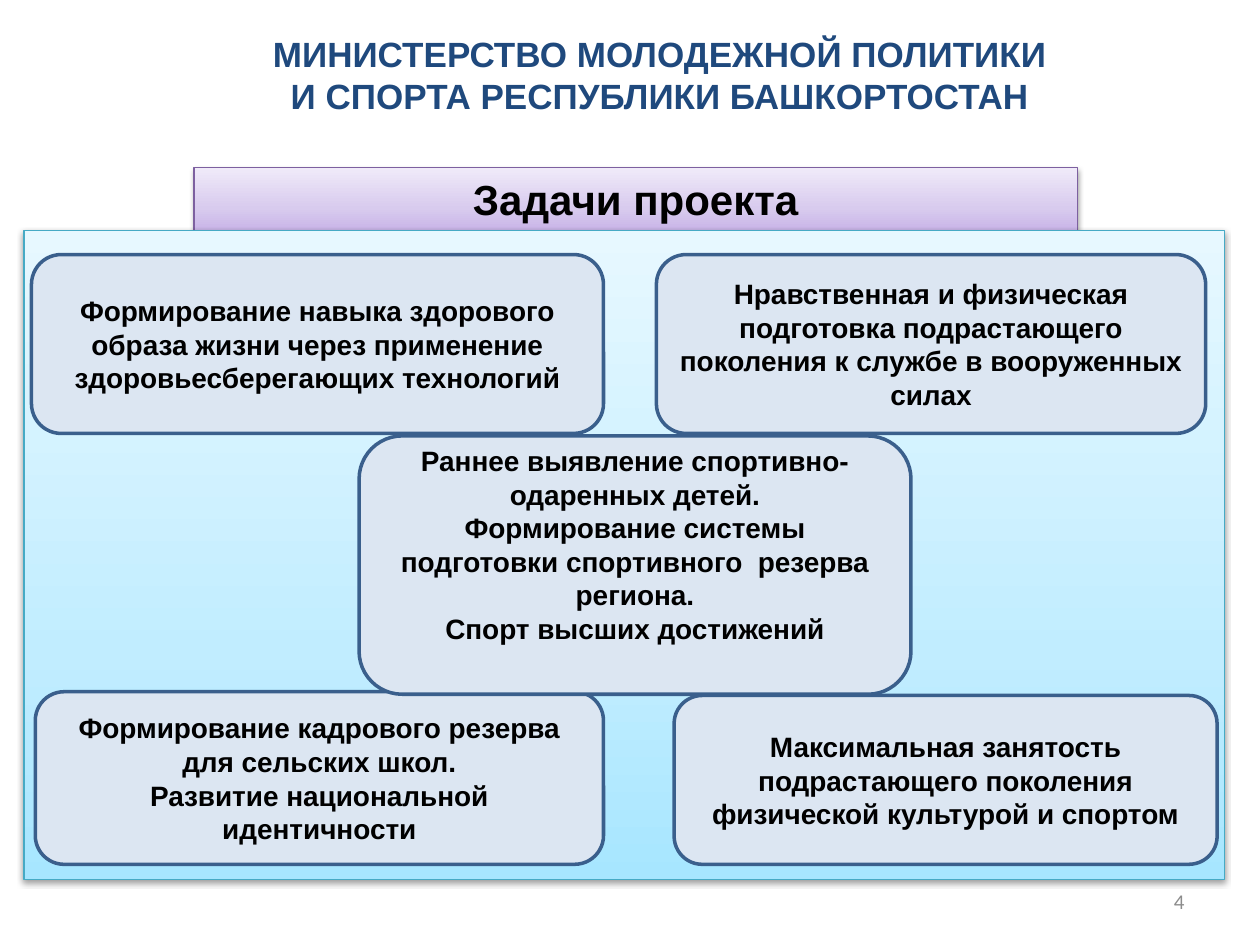
import copy
import pptx
import pptx.util
import pptx.dml.color
import pptx.enum.shapes
import pptx.enum.text
import pptx.oxml
import pptx.oxml.ns

Inches, Pt = pptx.util.Inches, pptx.util.Pt
RGB = pptx.dml.color.RGBColor
Align, Anchor = pptx.enum.text.PP_ALIGN, pptx.enum.text.MSO_ANCHOR
Kind = pptx.enum.shapes.MSO_SHAPE

NAVY = RGB(0x1F, 0x49, 0x7D)
BLACK = RGB(0, 0, 0)
GREY = RGB(0x8C, 0x8C, 0x8C)
CARD = RGB(0xDC, 0xE6, 0xF2)
EDGE = RGB(0x3A, 0x5F, 0x8C)
PLUM = RGB(0x7D, 0x60, 0xA0)
TEAL = RGB(0x46, 0xAA, 0xC5)
LILAC = (RGB(0xC9, 0xB5, 0xE8), RGB(0xD8, 0xCB, 0xEE), RGB(0xF0, 0xEA, 0xF9))
SKY = (RGB(0xA7, 0xE6, 0xFF), RGB(0xC1, 0xED, 0xFF), RGB(0xE7, 0xF8, 0xFF))

TITLE = ("МИНИСТЕРСТВО МОЛОДЕЖНОЙ ПОЛИТИКИ", "И СПОРТА РЕСПУБЛИКИ БАШКОРТОСТАН")
CARDS = (
    ((0.25, 2.02, 4.54, 1.42),
     ("Формирование навыка здорового образа жизни через применение "
      "здоровьесберегающих технологий",)),
    ((0.28, 5.49, 4.51, 1.37),
     ("Формирование кадрового резерва для сельских школ.",
      "Развитие национальной идентичности")),
    ((5.35, 5.52, 4.31, 1.34),
     ("Максимальная занятость подрастающего поколения физической "
      "культурой и спортом",)),
    ((5.21, 2.02, 4.36, 1.42),
     ("Нравственная и физическая подготовка подрастающего поколения "
      "к службе в вооруженных силах",)),
)
CORE = ((2.85, 3.46, 4.38, 2.05),
        ("Раннее выявление спортивно-одаренных детей.",
         "Формирование системы подготовки спортивного  резерва региона.",
         "Спорт высших достижений"))

SHADOW = (
    '<a:effectLst %s><a:outerShdw blurRad="%d" dist="%d" dir="5400000" rotWithShape="0">'
    '<a:srgbClr val="000000"><a:alpha val="38000"/></a:srgbClr></a:outerShdw></a:effectLst>'
    % (pptx.oxml.ns.nsdecls("a"), Pt(3.1), Pt(1.6)))


def write(shape, lines, size, color=BLACK, bold=True, font="Arial",
          align=Align.CENTER, anchor=Anchor.MIDDLE):
    frame = shape.text_frame
    frame.text = "\n".join(lines)
    frame.word_wrap = True
    frame.vertical_anchor = anchor
    for par in frame.paragraphs:
        par.alignment = align
        for run in par.runs:
            run.font.name = font
            run.font.size = Pt(size)
            run.font.bold = bold
            run.font.color.rgb = color


def add_text(slide, box, lines, size, **style):
    write(slide.shapes.add_textbox(*map(Inches, box)), lines, size, **style)


def add_panel(slide, box, colors, edge):
    """Rectangle with a soft shadow, shaded from the bottom up."""
    shape = slide.shapes.add_shape(Kind.RECTANGLE, *map(Inches, box))
    shape.fill.gradient()
    shape.fill.gradient_angle = 90
    stops = shape.element.spPr.find(".//" + pptx.oxml.ns.qn("a:gsLst"))
    stops.append(copy.deepcopy(stops[0]))
    for stop, color, place in zip(shape.fill.gradient_stops, colors, (0, 0.35, 1)):
        stop.color.rgb = color
        stop.position = place
    shape.line.color.rgb = edge
    shape.line.width = Pt(0.75)
    shape.element.spPr.append(pptx.oxml.parse_xml(SHADOW))
    return shape


def add_card(slide, box, lines):
    shape = slide.shapes.add_shape(Kind.ROUNDED_RECTANGLE, *map(Inches, box))
    shape.shadow.inherit = False
    shape.fill.solid()
    shape.fill.fore_color.rgb = CARD
    shape.line.color.rgb = EDGE
    shape.line.width = Pt(2)
    write(shape, lines, 16)
    return shape


def main():
    deck = pptx.Presentation()
    deck.slide_width, deck.slide_height = Inches(10), Inches(7.5)
    slide = deck.slides.add_slide(deck.slide_layouts[6])

    add_text(slide, (1.3, 0.21, 7.87, 1.11), TITLE, 20, color=NAVY, anchor=Anchor.TOP)
    banner = add_panel(slide, (1.54, 1.33, 7.01, 0.5), LILAC, PLUM)
    write(banner, ["Задачи проекта"], 24, anchor=Anchor.TOP)
    add_panel(slide, (0.19, 1.83, 9.53, 5.15), SKY, TEAL)
    for box, lines in CARDS:
        add_card(slide, box, lines)
    core = add_card(slide, *CORE)
    core.text_frame.margin_bottom = Inches(0.38)
    add_text(slide, (7.17, 6.95, 2.33, 0.4), ["4"], 12, color=GREY, bold=False,
             font="Calibri", align=Align.RIGHT)

    deck.save("out.pptx")


if __name__ == "__main__":
    main()
